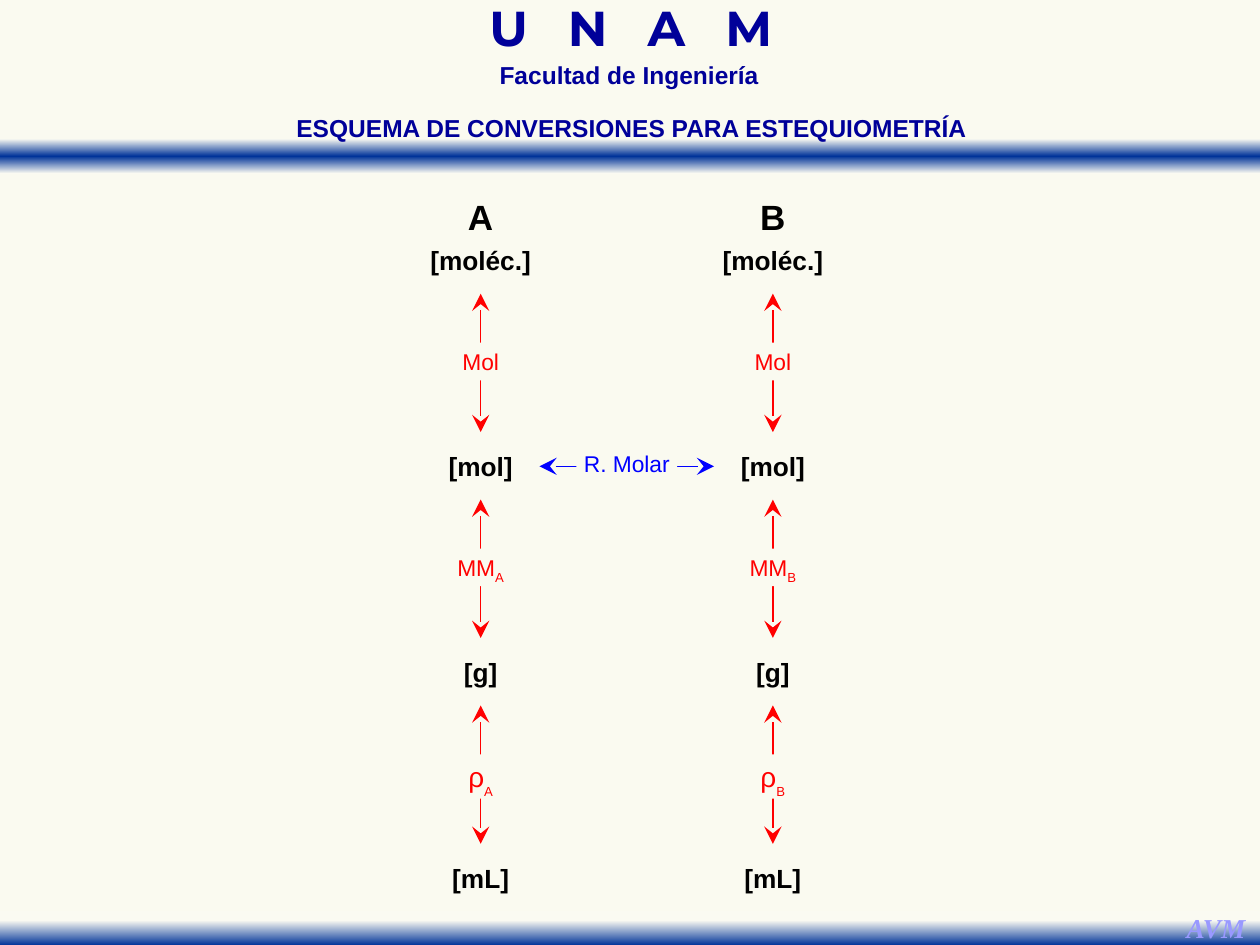
from lxml import etree
from pptx import Presentation
from pptx.dml.color import RGBColor
from pptx.enum.shapes import MSO_CONNECTOR, MSO_SHAPE
from pptx.enum.text import MSO_ANCHOR, MSO_AUTO_SIZE, PP_ALIGN
from pptx.oxml.ns import qn
from pptx.util import Cm, Pt

RECTANGLE = MSO_SHAPE.RECTANGLE
STRAIGHT = MSO_CONNECTOR.STRAIGHT
TOP = MSO_ANCHOR.TOP
GROW = MSO_AUTO_SIZE.SHAPE_TO_FIT_TEXT
CENTER = PP_ALIGN.CENTER

CREAM = RGBColor(0xFA, 0xFA, 0xF0)
BAND_CREAM = RGBColor(0xFA, 0xFA, 0xF2)
BAND_BLUE = RGBColor(0x00, 0x33, 0x99)
NAVY = RGBColor(0x00, 0x00, 0x99)
LILAC = RGBColor(0x99, 0x99, 0xFF)
BLACK = RGBColor(0x00, 0x00, 0x00)
RED = RGBColor(0xFF, 0x00, 0x00)
BLUE = RGBColor(0x00, 0x00, 0xFF)

SLIDE_WIDTH, SLIDE_HEIGHT = 25.4, 19.05

# Substance columns (centres) and unit rows, in cm
COLUMNS = {"A": 9.69, "B": 15.58}
HEADING_TOP = 3.81
FIRST_UNIT_TOP, ROW_STEP = 4.8, 4.15
ARROW_OFFSET, ARROW_LENGTH = 1.12, 2.79
FACTOR_OFFSET = 2.11

# Text and width of each unit
UNITS = [("[moléc.]", 2.57), ("[mol]", 1.83), ("[g]", 1.19), ("[mL]", 1.68)]
# Symbol, size, subscript baseline (None: no subscript), width, height
FACTORS = [
    ("Mol", 13, None, 0.94, 0.76),
    ("MM", 13, -25000, 1.19, 0.76),
    ("ρ", 16, -40000, 0.71, 0.89),
]


def add_band(slide, top, stops):
    """Full-width band with a vertical gradient of (percent, colour) stops."""
    band = slide.shapes.add_shape(
        RECTANGLE, 0, Cm(top), Cm(SLIDE_WIDTH), Cm(0.7))
    band.shadow.inherit = False
    band.line.fill.background()
    gradient = etree.Element(qn("a:gradFill"), rotWithShape="1")
    stop_list = etree.SubElement(gradient, qn("a:gsLst"))
    for percent, color in stops:
        stop = etree.SubElement(stop_list, qn("a:gs"), pos=str(percent * 1000))
        etree.SubElement(stop, qn("a:srgbClr"), val=str(color))
    etree.SubElement(gradient, qn("a:lin"), ang="5400000", scaled="1")
    band.element.spPr.find(qn("a:prstGeom")).addnext(gradient)


def write_text(shape, text, size, color, bold=False, font="Arial", wrap=False):
    frame = shape.text_frame
    frame.word_wrap = wrap
    frame.auto_size = GROW
    frame.vertical_anchor = TOP
    paragraph = frame.paragraphs[0]
    paragraph.alignment = CENTER
    paragraph.font.name = font
    paragraph.font.size = Pt(size)
    paragraph.font.bold = bold
    paragraph.font.color.rgb = color
    paragraph.add_run().text = text
    return paragraph


def add_caption(slide, box, text, size, color=NAVY, font="Arial", wrap=True):
    caption = slide.shapes.add_textbox(*(Cm(length) for length in box))
    return write_text(caption, text, size, color, True, font, wrap)


def add_label(shapes, center, top, width, height, text, size, color,
              bold=False, margin=None):
    """Background-coloured box centred on a column."""
    label = shapes.add_shape(
        RECTANGLE, Cm(center - width / 2), Cm(top), Cm(width), Cm(height))
    label.shadow.inherit = False
    label.fill.solid()
    label.fill.fore_color.rgb = CREAM
    label.line.fill.background()
    if margin is not None:
        frame = label.text_frame
        frame.margin_left = frame.margin_right = Cm(margin)
        frame.margin_top = frame.margin_bottom = Cm(margin)
    return write_text(label, text, size, color, bold)


def add_double_arrow(shapes, x1, y1, x2, y2, color):
    arrow = shapes.add_connector(STRAIGHT, Cm(x1), Cm(y1), Cm(x2), Cm(y2))
    arrow.line.color.rgb = color
    arrow.line.width = Pt(0.75)
    line = arrow.line._get_or_add_ln()
    for end in ("a:headEnd", "a:tailEnd"):
        etree.SubElement(line, qn(end), type="stealth", w="lg", len="lg")
    etree.SubElement(arrow.element.spPr, qn("a:effectLst"))


def add_column(slide, substance, center):
    column = slide.shapes.add_group_shape().shapes
    add_label(column, center, HEADING_TOP, 1.04, 1.12, substance, 20, BLACK, True)

    # Units from molecules down to millilitres
    unit_tops = [FIRST_UNIT_TOP + row * ROW_STEP for row in range(len(UNITS))]
    for top, (unit, width) in zip(unit_tops, UNITS):
        add_label(column, center, top, width, 0.89, unit, 15, BLACK, True)

    # Conversion factor between each pair of units
    for top, (symbol, size, baseline, width, height) in zip(unit_tops, FACTORS):
        arrow_top = top + ARROW_OFFSET
        add_double_arrow(column, center, arrow_top + ARROW_LENGTH,
                         center, arrow_top, RED)
        factor = add_label(column, center, top + FACTOR_OFFSET, width, height,
                           symbol, size, RED, margin=0.1)
        if baseline is not None:
            subscript = factor.add_run()
            subscript.text = substance
            subscript.font.size = Pt(13)
            subscript.font._element.set("baseline", str(baseline))


def add_molar_ratio(slide):
    middle = sum(COLUMNS.values()) / 2
    add_double_arrow(slide.shapes, middle - 1.76, 9.4, middle + 1.76, 9.4, BLUE)
    add_label(slide.shapes, middle, 8.97, 2.03, 0.76, "R. Molar", 13, BLUE,
              margin=0.1)


def add_header(slide):
    add_band(slide, 2.8, [(0, BAND_CREAM), (50, BAND_BLUE), (100, BAND_CREAM)])
    university = add_caption(slide, (7.75, 0.15, 9.93, 1.09), "U N A ", 28,
                             font="Montserrat")
    # Widely spaced initials; the last one needs no space after it
    university.runs[0].font._element.set("spc", "750")
    university.add_run().text = "M"
    faculty = add_caption(slide, (8.15, 1.24, 9.07, 0.69),
                          "Facultad de Ingeniería", 14)
    university.line_spacing = faculty.line_spacing = 0.7
    add_caption(slide, (5.05, 2.16, 15.37, 0.86),
                "ESQUEMA DE CONVERSIONES PARA ESTEQUIOMETRÍA", 14)


def add_footer(slide):
    add_band(slide, 18.36, [(28, BAND_CREAM), (100, BAND_BLUE)])
    initials = add_caption(slide, (23.65, 18.24, 1.73, 0.94), "AVM", 15.6,
                           LILAC, "Times New Roman", wrap=False)
    initials.font.italic = True


def main():
    presentation = Presentation()
    presentation.slide_width = Cm(SLIDE_WIDTH)
    presentation.slide_height = Cm(SLIDE_HEIGHT)
    slide = presentation.slides.add_slide(presentation.slide_layouts[6])
    slide.background.fill.solid()
    slide.background.fill.fore_color.rgb = CREAM

    add_header(slide)
    add_footer(slide)
    add_molar_ratio(slide)
    for substance, center in COLUMNS.items():
        add_column(slide, substance, center)
    presentation.save("out.pptx")


if __name__ == "__main__":
    main()
